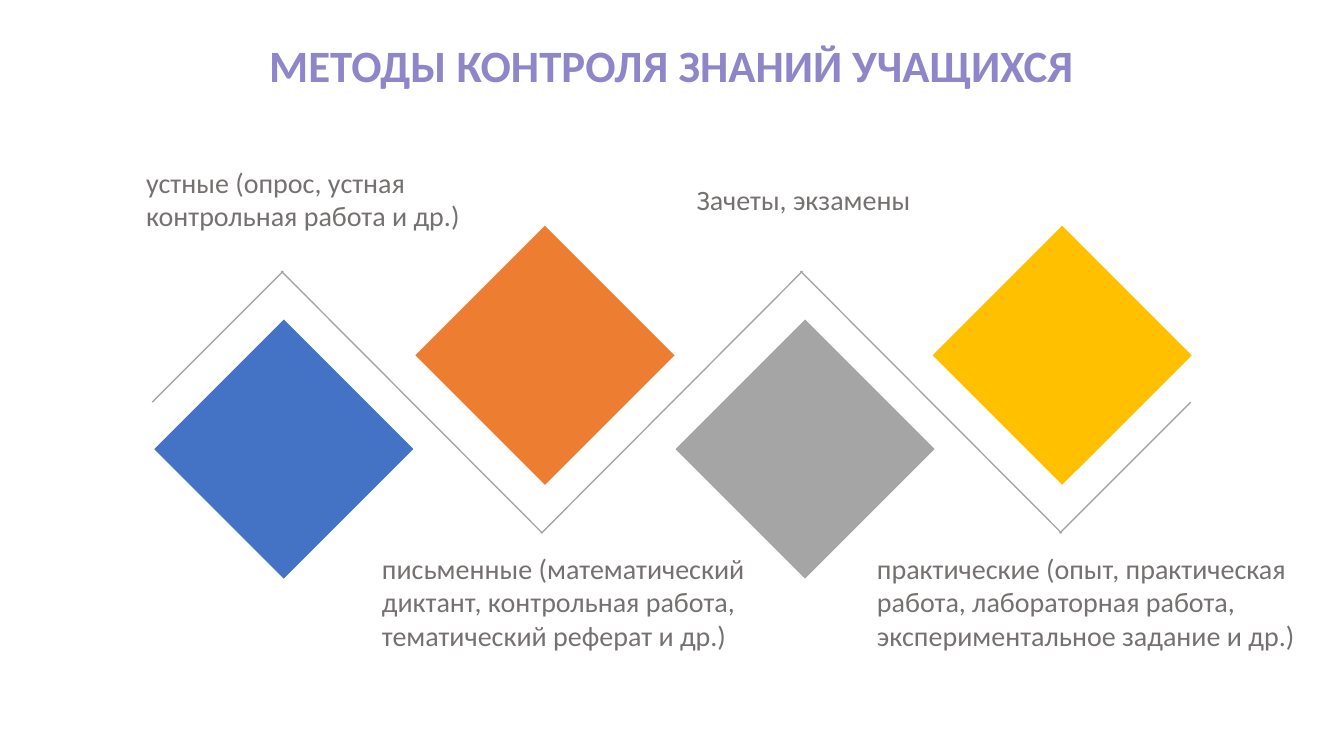
from lxml import etree
from pptx import Presentation
from pptx.dml.color import RGBColor
from pptx.enum.shapes import MSO_CONNECTOR as Link, MSO_SHAPE as Kind
from pptx.enum.text import MSO_ANCHOR as Anchor, MSO_AUTO_SIZE as Fit, PP_ALIGN as Align
from pptx.oxml.ns import qn
from pptx.util import Pt

PX = 9144


def tint(code):
    return RGBColor.from_string(code)


def write(box, text, size, color, bold=False, wrap=True):
    left, top, width, height = [n * PX for n in box]
    frame = slide.shapes.add_textbox(left, top, width, height).text_frame
    frame.word_wrap = wrap
    frame.text = text
    font = frame.paragraphs[0].runs[0].font
    font.name = "Calibri"
    font.size = Pt(size)
    font.bold = bold
    font.color.rgb = tint(color)
    return frame


deck = Presentation()
deck.slide_width = 1333 * PX
deck.slide_height = 750 * PX
slide = deck.slides.add_slide(deck.slide_layouts[6])

high, mid, low = 269, 399, 529
lines = [
    (279, high, 538, low),
    (281, high, 151, mid),
    (1051, low, 1181, mid),
    (796, high, 537, low),
    (794, high, 1053, low),
]
for ends in lines:
    line = slide.shapes.add_connector(Link.STRAIGHT, *[n * PX for n in ends])
    line.line.color.rgb = tint("A6A6A6")
    line.line.width = Pt(1)
    etree.SubElement(line._element.spPr, qn("a:effectLst"))

side = 257 * PX
gems = [
    (153, 317, "4472C4"),
    (412, 224, "ED7D31"),
    (670, 317, "A5A5A5"),
    (925, 224, "FFC000"),
]
for left, top, color in gems:
    gem = slide.shapes.add_shape(Kind.DIAMOND, left * PX, top * PX, side, side)
    gem.shadow.inherit = False
    gem.fill.solid()
    gem.fill.fore_color.rgb = tint(color)
    gem.line.fill.background()

title = write((91, -5, 1150, 145), "МЕТОДЫ КОНТРОЛЯ ЗНАНИЙ УЧАЩИХСЯ", 32, "8F85C9", bold=True)
title.vertical_anchor = Anchor.MIDDLE
title.paragraphs[0].alignment = Align.CENTER
title.paragraphs[0].line_spacing = 0.9

notes = [
    ((135, 159, 339, 77), "устные (опрос, устная контрольная работа и др.)", True),
    ((369, 542, 387, 111), "письменные (математический диктант, контрольная работа, тематический реферат и др.)", True),
    ((681, 176, 235, 44), "Зачеты, экзамены", False),
    ((860, 542, 474, 111), "практические (опыт, практическая работа, лабораторная работа, экспериментальное задание и др.)", True),
]
for box, text, wrap in notes:
    note = write(box, text, 20, "767171", wrap=wrap)
    note.auto_size = Fit.SHAPE_TO_FIT_TEXT

deck.save("out.pptx")
